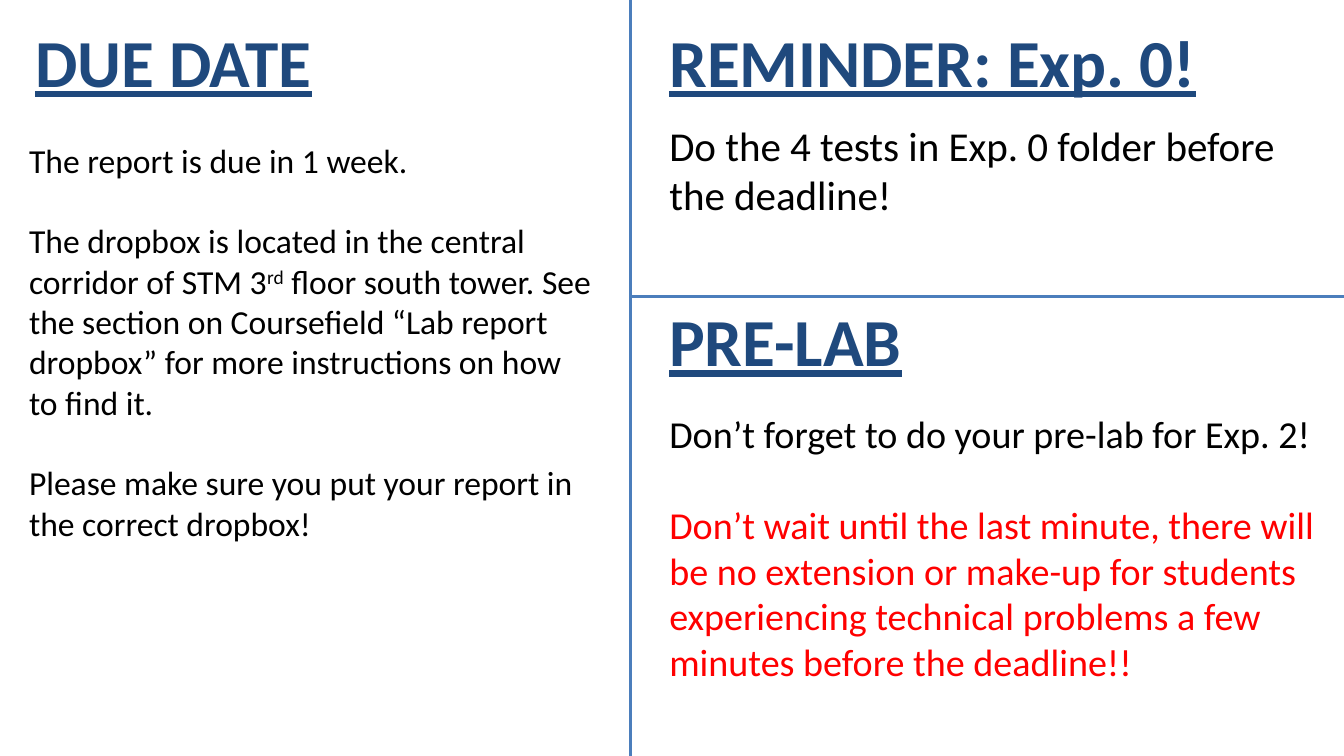
from lxml import etree
from pptx import Presentation
from pptx import util as u
from pptx.dml.color import RGBColor
from pptx.enum import shapes, text
from pptx.oxml.ns import qn

WIDE, HIGH = 25.4, 14.29
LEFT, RIGHT = 0.41, 12.4  # left edges of the two columns
SPLIT, CROSS = 11.91, 5.61  # dividing lines
HEAD_TOP, HEAD_HIGH = -0.05, 2.39
NAVY, BLUE, BLACK, RED = "1F497D", "4B7EBC", "000000", "FF0000"


def paint(color, code):
    color.rgb = RGBColor.from_string(code)


class Page:
    font = "Calibri"

    def __init__(self, slide):
        self.slide = slide

    def place(self, shape, x, y, w, h):
        shape.left, shape.top = u.Cm(x), u.Cm(y)
        shape.width, shape.height = u.Cm(w), u.Cm(h)

    def run(self, para, words, size, code, bold=False, rise=0):
        """Add one run; rise is the superscript height in percent."""
        run = para.add_run()
        run.text = words
        font = run.font
        font.name, font.size = self.font, u.Pt(size)
        paint(font.color, code)
        if bold:
            font.bold = font.underline = True
        if rise:
            run._r.get_or_add_rPr().set("baseline", str(rise * 1000))

    def frame(self, shape, anchor):
        frame = shape.text_frame
        frame.word_wrap = True
        frame.auto_size = text.MSO_AUTO_SIZE.NONE
        frame.vertical_anchor = anchor
        return frame

    def box(self):
        return self.slide.shapes.add_textbox(0, 0, 0, 0)

    def head(self, shape, words, x, y, w):
        self.place(shape, x, y, w, HEAD_HIGH)
        para = self.frame(shape, text.MSO_ANCHOR.MIDDLE).paragraphs[0]
        para.alignment = text.PP_ALIGN.LEFT
        self.run(para, words, 36, NAVY, bold=True)

    def body(self, paras, area, size, gap=0, inset=0.13):
        """Fill a box with paragraphs, each a list of (words, colour, rise)."""
        shape = self.box()
        self.place(shape, *area)
        frame = self.frame(shape, text.MSO_ANCHOR.TOP)
        frame.margin_top = u.Cm(inset)
        for i, runs in enumerate(paras):
            para = frame.add_paragraph() if i else frame.paragraphs[0]
            if i:
                para.space_before = u.Pt(gap)
            for words, code, rise in runs:
                self.run(para, words, size, code, rise=rise)

    def line(self, *ends):
        line = self.slide.shapes.add_connector(
            shapes.MSO_CONNECTOR.STRAIGHT, *map(u.Cm, ends))
        paint(line.line.color, BLUE)
        line.line.width = u.Pt(1.5)
        etree.SubElement(line._element.spPr, qn("a:effectLst"))


def main():
    deck = Presentation()
    deck.slide_width, deck.slide_height = u.Cm(WIDE), u.Cm(HIGH)
    page = Page(deck.slides.add_slide(deck.slide_layouts[5]))

    page.head(page.slide.shapes.title, "DUE DATE", LEFT, HEAD_TOP, 9.3)
    page.body([
        [("The report is due in 1 week.", BLACK, 0)],
        [("The dropbox is located in the central corridor of STM 3", BLACK, 0),
         ("rd", BLACK, 30),
         (" floor south tower. See the section on Coursefield “Lab report "
          "dropbox” for more instructions on how to find it.", BLACK, 0)],
        [("Please make sure you put your report in the correct dropbox!",
          BLACK, 0)],
    ], (0.3, 2.51, 11.2, 7.95), 18, gap=21.6)

    page.head(page.box(), "REMINDER: Exp. 0!", RIGHT, HEAD_TOP, 12.09)
    page.body([
        [("Do the 4 tests in Exp. 0 folder before the deadline!", BLACK, 0)],
    ], (RIGHT, 2.15, 13.1, 2.59), 22)

    page.head(page.box(), "PRE-LAB", RIGHT, 5.23, 9.3)
    page.body([
        [("Don’t forget to do your pre-lab for Exp. 2!", BLACK, 0)],
        [("Don’t wait until the last minute, there will be no extension or "
          "make-up for students experiencing technical problems a few "
          "minutes before the deadline!!", RED, 0)],
    ], (RIGHT, 6.63, 12.7, 5.31), 20.4, gap=24.4, inset=1.12)

    page.line(SPLIT, 0, SPLIT, HIGH)
    page.line(SPLIT, CROSS, WIDE, CROSS)
    deck.save("out.pptx")


if __name__ == "__main__":
    main()
